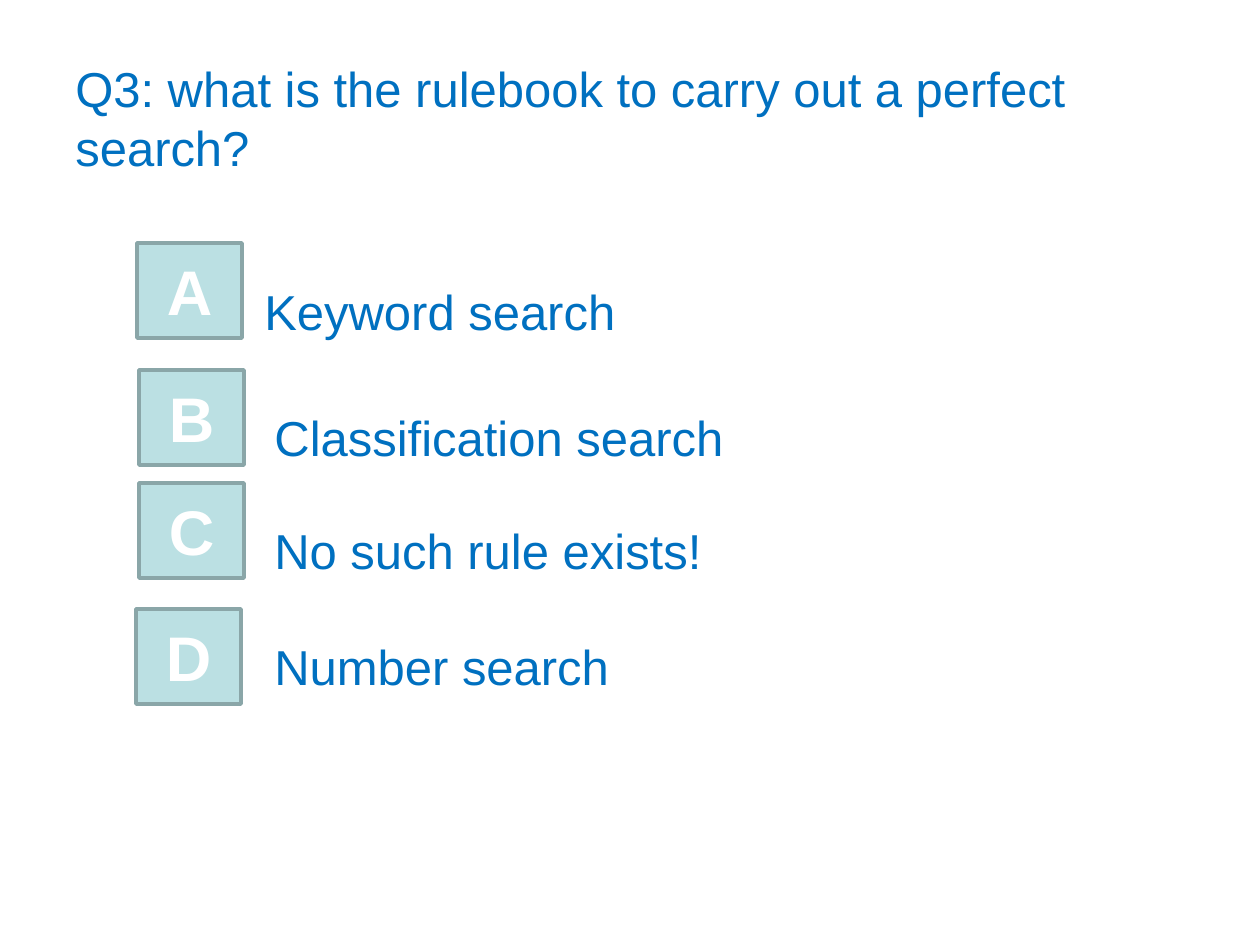
from dataclasses import dataclass

from pptx import Presentation
from pptx.dml.color import RGBColor
from pptx.enum.shapes import MSO_SHAPE as Shape
from pptx.enum.text import MSO_ANCHOR as Anchor, PP_ALIGN as Align
from pptx.util import Emu, Pt

PX = 914400 / 126  # EMU per px
FONT = "Arial"
BUTTON_W, BUTTON_H = 105, 95
COLORS = {
    "text": "0070C0",
    "button": "BBE0E3",
    "edge": "8AA6A8",
    "letter": "FFFFFF",
}


@dataclass
class Box:
    x: int
    y: int
    w: int
    h: int

    def emu(self) -> list[Emu]:
        return [Emu(round(v * PX)) for v in (self.x, self.y, self.w, self.h)]


@dataclass
class Answer:
    letter: str
    button_x: int
    button_y: int
    text: str
    box: Box


TITLE = "Q3: what is the rulebook to carry out a perfect search?"
ANSWERS = [
    Answer("A", 137, 243, "Keyword search", Box(252, 275, 756, 69)),
    Answer("B", 139, 370, "Classification search", Box(262, 401, 726, 72)),
    Answer("C", 139, 483, "No such rule exists!", Box(262, 514, 746, 72)),
    Answer("D", 136, 609, "Number search", Box(262, 630, 746, 72)),
]


def rgb(name: str) -> RGBColor:
    return RGBColor.from_string(COLORS[name])


def add_run(p, text: str, size: int, color: str, bold: bool = False) -> None:
    r = p.add_run()
    r.text = text
    r.font.name = FONT
    r.font.size = Pt(size)
    r.font.bold = bold
    r.font.color.rgb = rgb(color)


def add_text(s, box: Box, text: str, anchor: Anchor = Anchor.TOP) -> None:
    tf = s.shapes.add_textbox(*box.emu()).text_frame
    tf.word_wrap = True
    tf.vertical_anchor = anchor
    add_run(tf.paragraphs[0], text, 28, "text")


def add_button(s, box: Box, letter: str) -> None:
    sp = s.shapes.add_shape(Shape.ACTION_BUTTON_CUSTOM, *box.emu())
    sp.shadow.inherit = False
    sp.fill.solid()
    sp.fill.fore_color.rgb = rgb("button")
    sp.line.color.rgb = rgb("edge")
    sp.line.width = Pt(2)
    tf = sp.text_frame
    tf.vertical_anchor = Anchor.MIDDLE
    p = tf.paragraphs[0]
    p.alignment = Align.CENTER
    add_run(p, letter, 36, "letter", bold=True)


def main() -> None:
    prs = Presentation()
    prs.slide_width, prs.slide_height = Box(0, 0, 1260, 945).emu()[2:]
    s = prs.slides.add_slide(prs.slide_layouts[6])

    # Question
    add_text(s, Box(63, 38, 1134, 158), TITLE, Anchor.MIDDLE)

    # Lettered answers
    for a in ANSWERS:
        add_button(s, Box(a.button_x, a.button_y, BUTTON_W, BUTTON_H), a.letter)
        add_text(s, a.box, a.text)

    prs.save("out.pptx")


if __name__ == "__main__":
    main()
